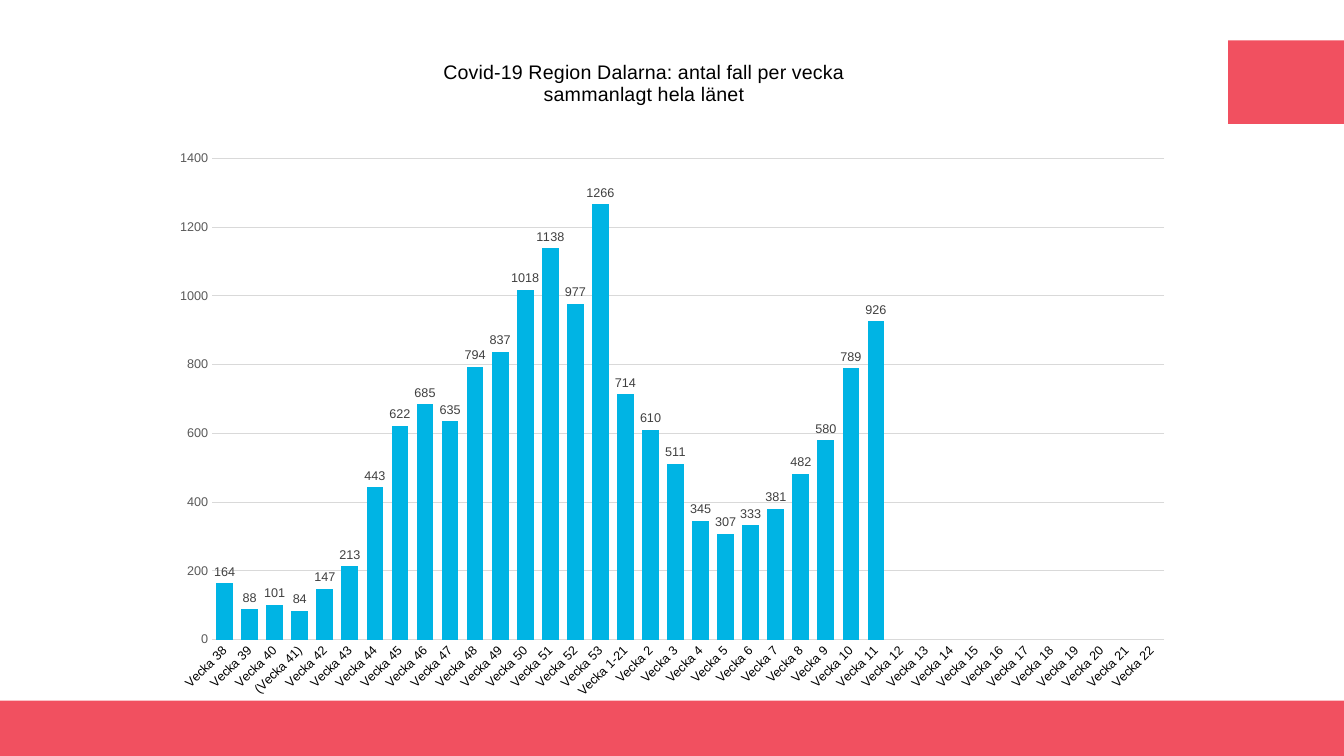
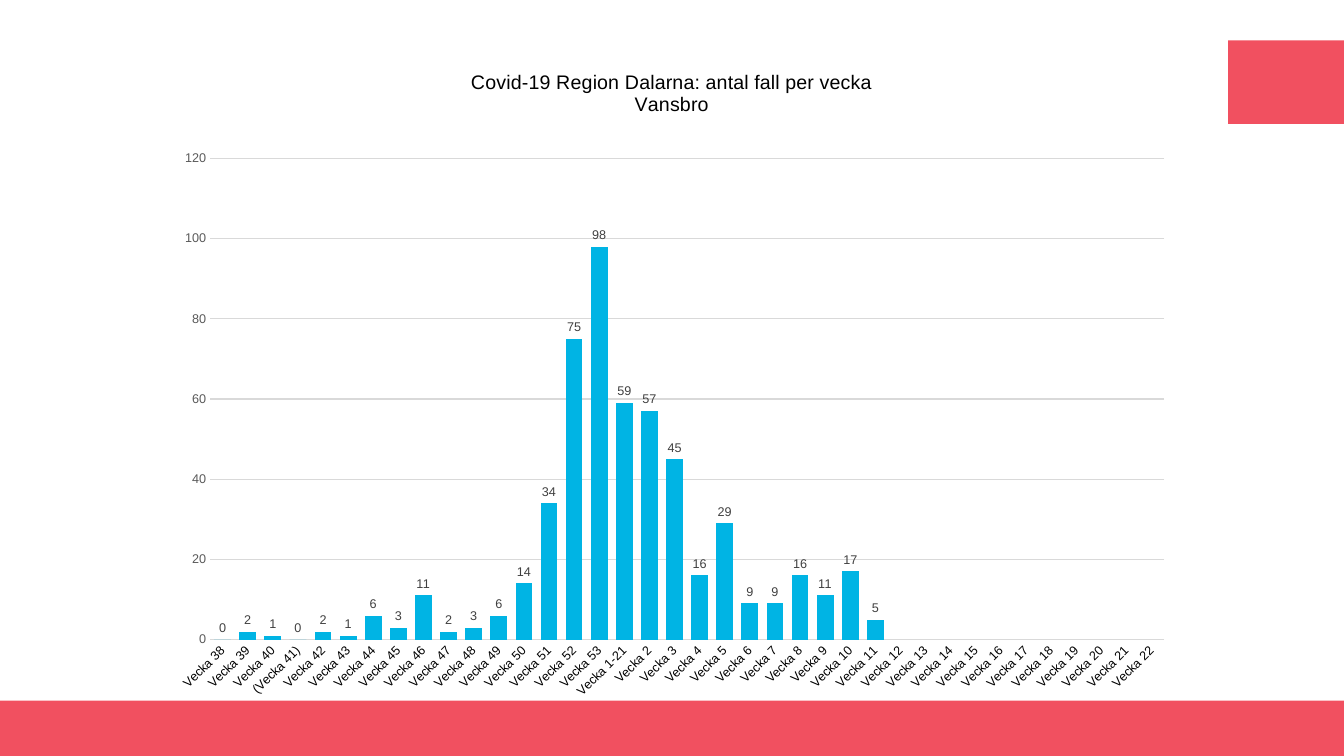
"""Build two slides with weekly Covid-19 case charts for Region Dalarna."""
from lxml.etree import SubElement
from pptx import Presentation
from pptx.chart.data import CategoryChartData
from pptx.dml.color import RGBColor
from pptx.enum.chart import XL_CHART_TYPE, XL_LABEL_POSITION, XL_TICK_MARK
from pptx.enum.shapes import MSO_SHAPE
from pptx.oxml import parse_xml
from pptx.oxml.ns import nsdecls, qn
from pptx.util import Inches, Pt

CORAL, CYAN, GRID = "F15060", "00B4E4", "D9D9D9"
BLACK, AXIS_GREY, LABEL_GREY = "000000", "595959", "404040"
BANDS = [(0, 6.95, 13.33, 0.55), (12.18, 0.4, 1.15, 0.83)]
CHART_BOX = (1.58, 0.43, 10.17, 6.64)
PLOT_TOP, PLOT_RIGHT, PLOT_HEIGHT = 0.172, 0.98, 0.719

WEEKS = [f"Vecka {week}" for week in [*range(38, 54), "1-21", *range(2, 23)]]
WEEKS[3] = "(Vecka 41)"

SLIDES = [
    {"area": "sammanlagt hela länet", "title_at": (0.274, 0.02),
     "plot_left": 0.0515, "maximum": 1400, "step": 200,
     "cases": [164, 88, 101, 84, 147, 213, 443, 622, 685, 635, 794, 837, 1018,
               1138, 977, 1266, 714, 610, 511, 345, 307, 333, 381, 482, 580,
               789, 926]},
    {"area": "Vansbro", "title_at": (0.301, 0.035),
     "plot_left": 0.0495, "maximum": 120, "step": 20,
     "cases": [0, 2, 1, 0, 2, 1, 6, 3, 11, 2, 3, 6, 14, 34, 75, 98, 59, 57, 45,
               16, 29, 9, 9, 16, 11, 17, 5]},
]


def style_font(font, size, color):
    """Apply the shared typeface with a size and a colour."""
    formats = {"name": "Arial", "size": Pt(size), "bold": False}
    for name, value in formats.items():
        setattr(font, name, value)
    font.color.rgb = RGBColor.from_string(color)


def set_layout(parent, **settings):
    """Give a chart title or plot area a manual layout."""
    layout = parent.find(qn("c:layout"))
    if layout is None:
        layout = parent.makeelement(qn("c:layout"))
        text = parent.find(qn("c:tx"))
        if text is None:
            parent.insert(0, layout)
        else:
            text.addnext(layout)
    for child in list(layout):
        layout.remove(child)
    manual = SubElement(layout, qn("c:manualLayout"))
    for name, value in settings.items():
        SubElement(manual, qn(f"c:{name}")).set("val", str(value))


deck = Presentation()
deck.slide_width, deck.slide_height = Inches(13.33), Inches(7.5)
blank = deck.slide_layouts[6]
pages = [deck.slides.add_slide(blank) for _ in SLIDES]

for bounds in BANDS:
    band = pages[0].shapes.add_shape(MSO_SHAPE.RECTANGLE, *map(Inches, bounds))
    band.shadow.inherit = False
    band.fill.solid()
    band.fill.fore_color.rgb = RGBColor.from_string(CORAL)
    band.line.fill.background()
    blank.shapes._spTree.append(band._element)

for page, content in zip(pages, SLIDES):
    data = CategoryChartData()
    data.categories = WEEKS
    cases = content["cases"]
    data.add_series("Series 1", cases + [None] * (len(WEEKS) - len(cases)))
    chart = page.shapes.add_chart(
        XL_CHART_TYPE.COLUMN_CLUSTERED, *map(Inches, CHART_BOX), data).chart
    chart.has_legend = False
    style_font(chart.font, 10, BLACK)
    chart._chartSpace.find(qn("c:chart")).addnext(parse_xml(
        f'<c:spPr {nsdecls("c", "a")}><a:noFill/><a:ln><a:noFill/></a:ln></c:spPr>'))

    title = chart.chart_title
    frame = title.text_frame
    frame.text = f"Covid-19 Region Dalarna: antal fall per vecka\n{content['area']}"
    for para in frame.paragraphs:
        style_font(para.font, 14, BLACK)
        for span in para.runs:
            style_font(span.font, 14, BLACK)
    title.include_in_layout = False
    title_x, title_y = content["title_at"]
    set_layout(title._element, xMode="edge", yMode="edge", x=title_x, y=title_y)
    left = content["plot_left"]
    set_layout(chart._chartSpace.chart.plotArea, layoutTarget="inner",
               xMode="edge", yMode="edge", x=left, y=PLOT_TOP,
               w=round(PLOT_RIGHT - left, 4), h=PLOT_HEIGHT)

    for axis, color in [(chart.category_axis, BLACK), (chart.value_axis, AXIS_GREY)]:
        axis.major_tick_mark = axis.minor_tick_mark = XL_TICK_MARK.NONE
        style_font(axis.tick_labels.font, 9, color)
    weeks_axis, cases_axis = chart.category_axis, chart.value_axis
    weeks_axis._element.find(qn("c:txPr")).find(qn("a:bodyPr")).set("rot", "-2700000")
    cases_axis.minimum_scale = 0
    cases_axis.maximum_scale = content["maximum"]
    cases_axis.major_unit = content["step"]
    cases_axis.format.line.fill.background()
    for line in (weeks_axis.format.line, cases_axis.major_gridlines.format.line):
        line.color.rgb = RGBColor.from_string(GRID)
        line.width = Pt(0.75)

    plot = chart.plots[0]
    plot.gap_width, plot.overlap, plot.vary_by_categories = 50, -27, False
    columns = plot.series[0]
    columns.format.fill.solid()
    columns.format.fill.fore_color.rgb = RGBColor.from_string(CYAN)
    labels = columns.data_labels
    labels.show_value = True
    labels.position = XL_LABEL_POSITION.OUTSIDE_END
    style_font(labels.font, 9, LABEL_GREY)

deck.save("out.pptx")
